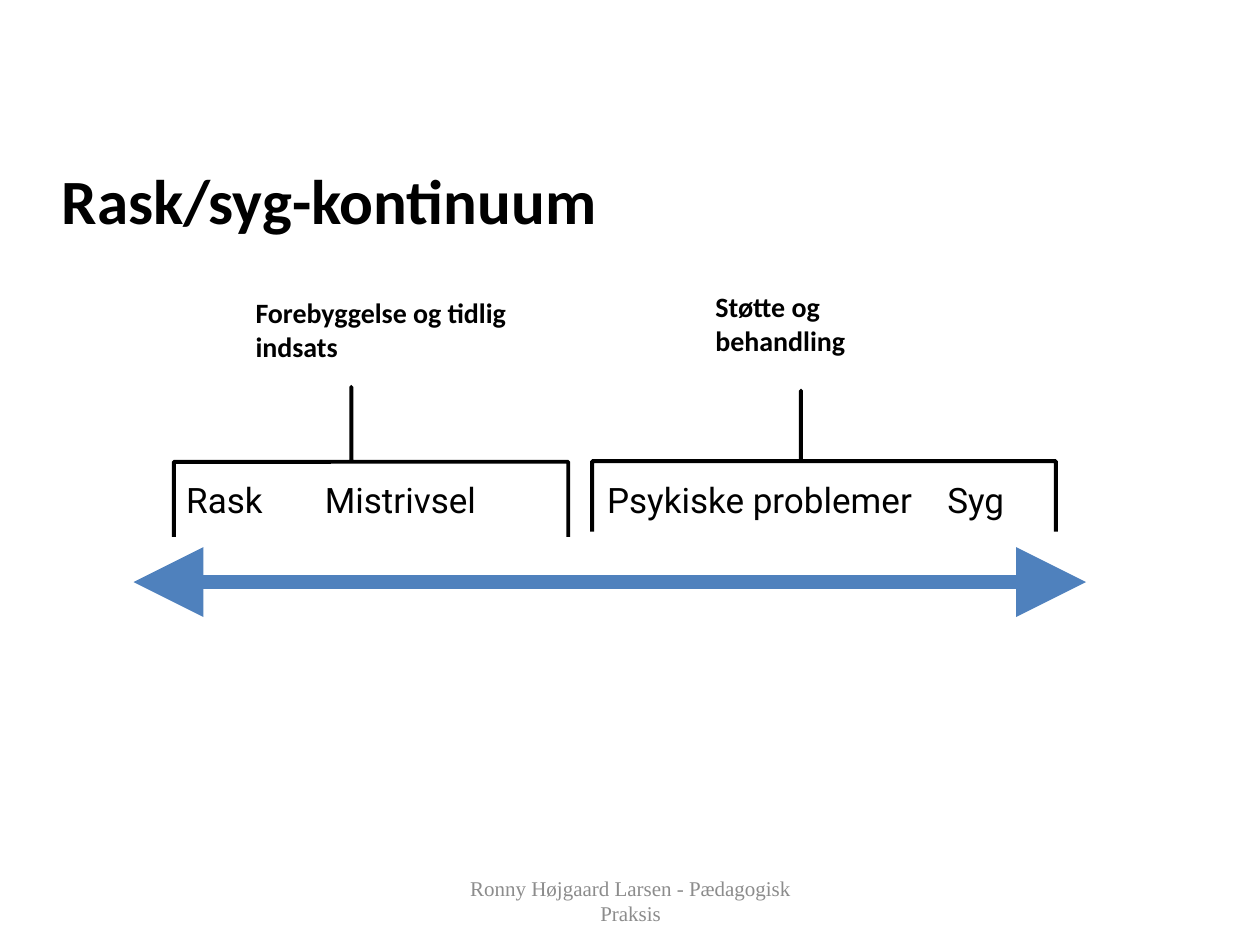
from dataclasses import dataclass

from lxml import etree
from pptx import Presentation
from pptx.dml.color import RGBColor
from pptx.enum.shapes import MSO_CONNECTOR, MSO_SHAPE
from pptx.enum.text import MSO_ANCHOR, PP_ALIGN
from pptx.oxml.ns import qn
from pptx.util import Inches, Pt

LEFT, CENTER = PP_ALIGN.LEFT, PP_ALIGN.CENTER
TOP, MIDDLE = MSO_ANCHOR.TOP, MSO_ANCHOR.MIDDLE
BRACE, STRAIGHT = MSO_SHAPE.LEFT_BRACE, MSO_CONNECTOR.STRAIGHT
COLORS = {"ink": "000000", "axis": "4F81BD", "foot": "8C8C8C"}


@dataclass
class Style:
    font: str
    size: float
    color: str = "ink"
    bold: bool = False
    align: PP_ALIGN = LEFT
    anchor: MSO_ANCHOR = TOP


@dataclass
class Label:
    text: str
    left: float
    top: float
    width: float
    height: float
    style: Style


@dataclass
class Brace:
    left: float
    top: float
    width: float
    height: float
    point: float


HEAD = Style("Calibri", 36, bold=True, anchor=MIDDLE)
STAGE = Style("Roboto", 20)
EFFORT = Style("Calibri", 16, bold=True)
FOOT = Style("Times New Roman", 12, "foot", align=CENTER, anchor=MIDDLE)

TITLE = Label("Rask/syg-kontinuum", 0.39, 0.88, 9.21, 1.41, HEAD)
STAGES = [
    ("Rask", 1.38, 1.1),
    ("Mistrivsel", 2.48, 1.7),
    ("Psykiske problemer", 4.72, 2.7),
    ("Syg", 7.42, 0.96),
]
LABELS = [Label(text, left, 3.75, width, 0.44, STAGE)
          for text, left, width in STAGES] + [
    Label("Forebyggelse og tidlig indsats", 1.93, 2.3, 2.3, 0.64, EFFORT),
    Label("Støtte og behandling", 5.58, 2.25, 2.01, 0.64, EFFORT),
    Label("Ronny Højgaard Larsen - Pædagogisk Praksis",
          3.42, 6.95, 3.17, 0.4, FOOT),
]
BRACES = [
    Brace(5.98, 1.82, 1.12, 3.68, 0.55),
    Brace(2.35, 2.1, 1.19, 3.13, 0.55),
]


def color(name: str) -> RGBColor:
    return RGBColor.from_string(COLORS[name])


def fill_text(shape, label: Label) -> None:
    """Place a text shape, then set and format its text."""
    shape.left, shape.top = Inches(label.left), Inches(label.top)
    shape.width, shape.height = Inches(label.width), Inches(label.height)
    style, frame = label.style, shape.text_frame
    frame.text = label.text
    frame.word_wrap = True
    frame.vertical_anchor = style.anchor
    par = frame.paragraphs[0]
    par.alignment = style.align
    font = par.runs[0].font
    font.name, font.size, font.bold = style.font, Pt(style.size), style.bold
    font.color.rgb = color(style.color)


def draw_label(slide, label: Label) -> None:
    fill_text(slide.shapes.add_textbox(0, 0, 0, 0), label)


def draw_brace(slide, brace: Brace) -> None:
    shape = slide.shapes.add_shape(
        BRACE, Inches(brace.left), Inches(brace.top),
        Inches(brace.width), Inches(brace.height))
    shape.rotation = 90
    shape.adjustments[0] = 0
    shape.adjustments[1] = brace.point
    shape.shadow.inherit = False
    shape.fill.background()
    shape.line.color.rgb = color("ink")
    shape.line.width = Pt(2.25)


def draw_axis(slide, left: float, right: float, top: float) -> None:
    """Draw the level line with a large arrowhead at both ends."""
    axis = slide.shapes.add_connector(
        STRAIGHT, Inches(left), Inches(top), Inches(right), Inches(top))
    axis.line.color.rgb = color("axis")
    axis.line.width = Pt(8)
    props = axis.line._get_or_add_ln()
    for end in ("a:headEnd", "a:tailEnd"):
        etree.SubElement(props, qn(end), type="triangle", w="lg", len="lg")
    etree.SubElement(axis._element.spPr, qn("a:effectLst"))


def main() -> None:
    deck = Presentation()
    deck.slide_width, deck.slide_height = Inches(10), Inches(7.5)
    slide = deck.slides.add_slide(deck.slide_layouts[5])
    fill_text(slide.shapes.title, TITLE)
    draw_axis(slide, 1.06, 8.62, 4.62)
    for label in LABELS:
        draw_label(slide, label)
    for brace in BRACES:
        draw_brace(slide, brace)
    deck.save("out.pptx")


if __name__ == "__main__":
    main()
